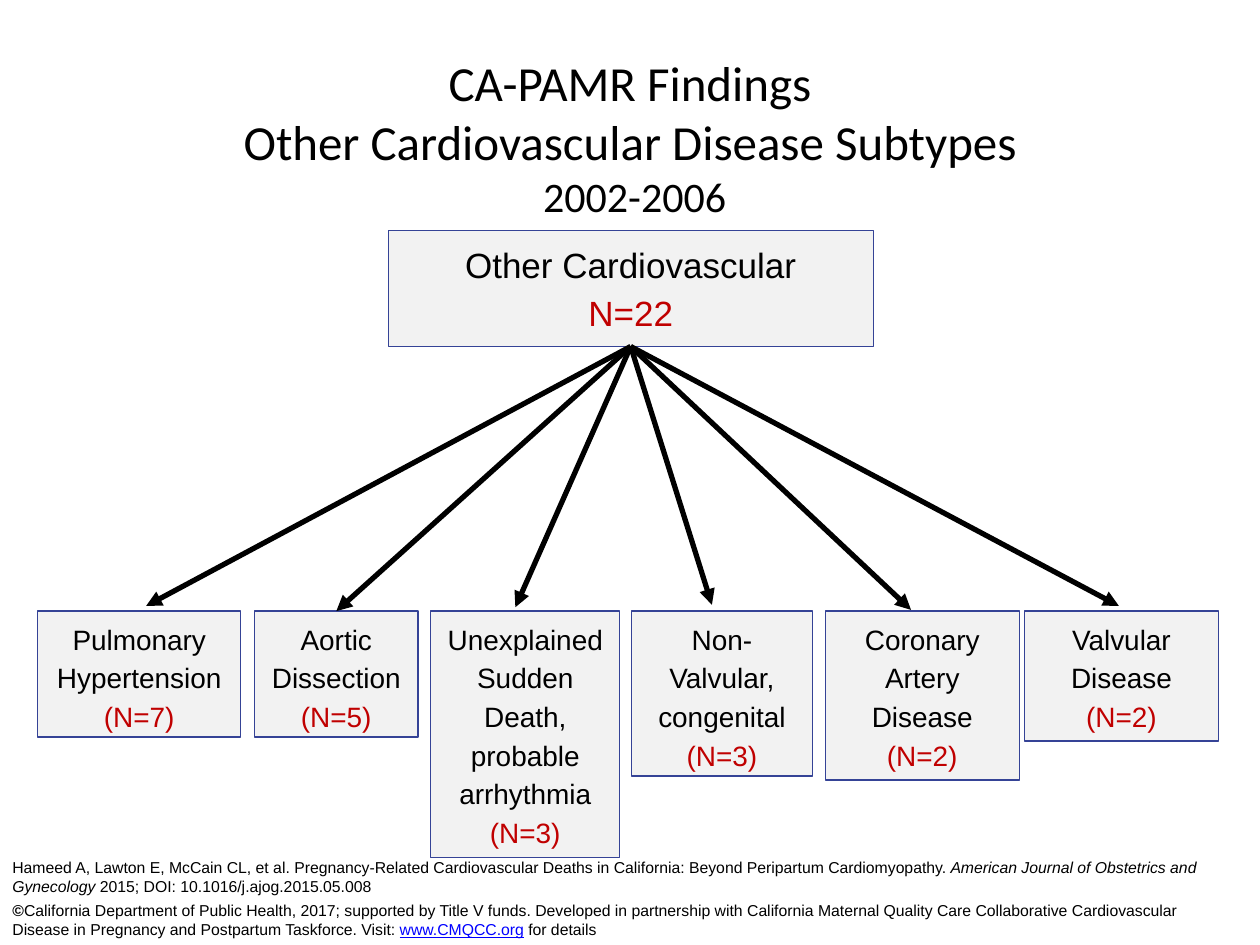
from dataclasses import dataclass

import pptx
import pptx.dml.color
import pptx.enum.shapes
import pptx.enum.text
import pptx.oxml.ns
import pptx.util
from lxml import etree

Pt = pptx.util.Pt
RGB = pptx.dml.color.RGBColor.from_string
CENTER = pptx.enum.text.PP_ALIGN.CENTER
GROW = pptx.enum.text.MSO_AUTO_SIZE.SHAPE_TO_FIT_TEXT


@dataclass(frozen=True)
class Theme:
    ink: str = "000000"
    count: str = "C00000"
    link: str = "0000FF"
    panel: str = "F2F2F2"
    border: str = "354396"
    heading_font: str = "Calibri"
    body_font: str = "Arial"
    title: int = 28
    period: int = 24
    root: int = 20
    subtype: int = 16
    note: int = 9
    box_spacing: float = 1.15


THEME = Theme()

# Label, count, left, width, height, arrow tip (None: middle of the box's top)
SUBTYPE_TOP = 349.2
SUBTYPES = [
    ("Pulmonary Hypertension", "(N=7)", 21.6, 116, 72, (83.5, 346.3)),
    ("Aortic Dissection", "(N=5)", 145.4, 93.6, 72, None),
    ("Unexplained Sudden Death, probable arrhythmia", "(N=3)",
     246.2, 108, 141, (294.5, 347)),
    ("Non-Valvular, congenital", "(N=3)", 360.7, 103.7, 94.3, (406.8, 345.6)),
    ("Coronary Artery Disease", "(N=2)", 471.6, 110.9, 96.5, (520.6, 348.5)),
    ("Valvular Disease", "(N=2)", 585.4, 110.9, 74.2, (639.4, 346.3)),
]

CITATION = [
    ("Hameed A, Lawton E, McCain CL, et al. Pregnancy-Related Cardiovascular Deaths "
     "in California: Beyond Peripartum Cardiomyopathy. ", {}),
    ("American Journal of Obstetrics and Gynecology", {"italic": True}),
    (" 2015; DOI: 10.1016/j.ajog.2015.05.008", {}),
]
COPYRIGHT = [
    ("©", {"bold": True}),
    ("California Department of Public Health, 2017; supported by Title V funds. "
     "Developed in partnership with California Maternal Quality Care Collaborative "
     "Cardiovascular Disease in Pregnancy and Postpartum Taskforce. Visit: ", {}),
    ("www.CMQCC.org", {"color": THEME.link, "underline": True}),
    (" for details", {}),
]


def add_run(paragraph, text, size, color=THEME.ink, font=THEME.body_font, **emphasis):
    run = paragraph.add_run()
    run.text = text
    run.font.name = font
    run.font.size = Pt(size)
    run.font.color.rgb = RGB(color)
    for attribute, value in emphasis.items():
        setattr(run.font, attribute, value)


def add_text_frame(slide, left, top, width, height):
    box = slide.shapes.add_textbox(Pt(left), Pt(top), Pt(width), Pt(height))
    box.text_frame.word_wrap = True
    return box.text_frame


def add_title(slide, left, top, width, height):
    frame = add_text_frame(slide, left, top, width, height)
    frame.vertical_anchor = pptx.enum.text.MSO_ANCHOR.MIDDLE
    heading = frame.paragraphs[0]
    heading.alignment = CENTER
    for line in ("CA-PAMR Findings", "Other Cardiovascular Disease Subtypes"):
        add_run(heading, line, THEME.title, font=THEME.heading_font)
        heading.add_line_break()
    add_run(heading, " 2002-2006", THEME.period, font=THEME.heading_font)


def add_disease_box(slide, label, count, size, left, top, width, height):
    box = slide.shapes.add_shape(pptx.enum.shapes.MSO_SHAPE.RECTANGLE,
                                 Pt(left), Pt(top), Pt(width), Pt(height))
    box.shadow.inherit = False
    box.fill.solid()
    box.fill.fore_color.rgb = RGB(THEME.panel)
    box.line.color.rgb = RGB(THEME.border)
    box.line.width = Pt(0.75)
    frame = box.text_frame
    frame.word_wrap = True
    frame.vertical_anchor = pptx.enum.text.MSO_ANCHOR.TOP
    for paragraph, text, color in ((frame.paragraphs[0], label, THEME.ink),
                                   (frame.add_paragraph(), count, THEME.count)):
        paragraph.alignment = CENTER
        paragraph.line_spacing = THEME.box_spacing
        add_run(paragraph, text, size, color)
    return box


def add_arrow(slide, root, subtype, tip):
    """Join the root's bottom to the tip, or to the subtype's top if there is none."""
    x, y = tip or (0, 0)
    arrow = slide.shapes.add_connector(pptx.enum.shapes.MSO_CONNECTOR.STRAIGHT,
                                       0, 0, Pt(x), Pt(y))
    arrow.begin_connect(root, 2)
    if tip is None:
        arrow.end_connect(subtype, 0)
    arrow.line.color.rgb = RGB(THEME.ink)
    arrow.line.width = Pt(3)
    qn = pptx.oxml.ns.qn
    etree.SubElement(arrow.line._get_or_add_ln(), qn("a:tailEnd"), type="triangle")
    etree.SubElement(arrow._element.spPr, qn("a:effectLst"))


def add_tree(slide, left, top, width, height):
    """Place the root in the given box and the subtypes in a row below it."""
    root = add_disease_box(slide, "Other Cardiovascular", "N=22", THEME.root,
                           left, top, width, height)
    for label, count, box_left, box_width, box_height, tip in SUBTYPES:
        subtype = add_disease_box(slide, label, count, THEME.subtype,
                                  box_left, SUBTYPE_TOP, box_width, box_height)
        subtype.text_frame.auto_size = GROW
        add_arrow(slide, root, subtype, tip)


def add_note(slide, runs, left, top, width, height):
    frame = add_text_frame(slide, left, top, width, height)
    frame.auto_size = GROW
    for text, style in runs:
        add_run(frame.paragraphs[0], text, THEME.note, **style)


def main():
    deck = pptx.Presentation()
    deck.slide_width, deck.slide_height = Pt(720), Pt(540)
    slide = deck.slides.add_slide(deck.slide_layouts[6])
    add_title(slide, 2.9, 48.2, 714.2, 59.8)
    add_tree(slide, 221.8, 131.8, 277.2, 66.2)
    add_note(slide, CITATION, 0, 486.7, 696.2, 28.8)
    add_note(slide, COPYRIGHT, 0, 511.2, 709.2, 28.8)
    deck.save("out.pptx")


if __name__ == "__main__":
    main()
